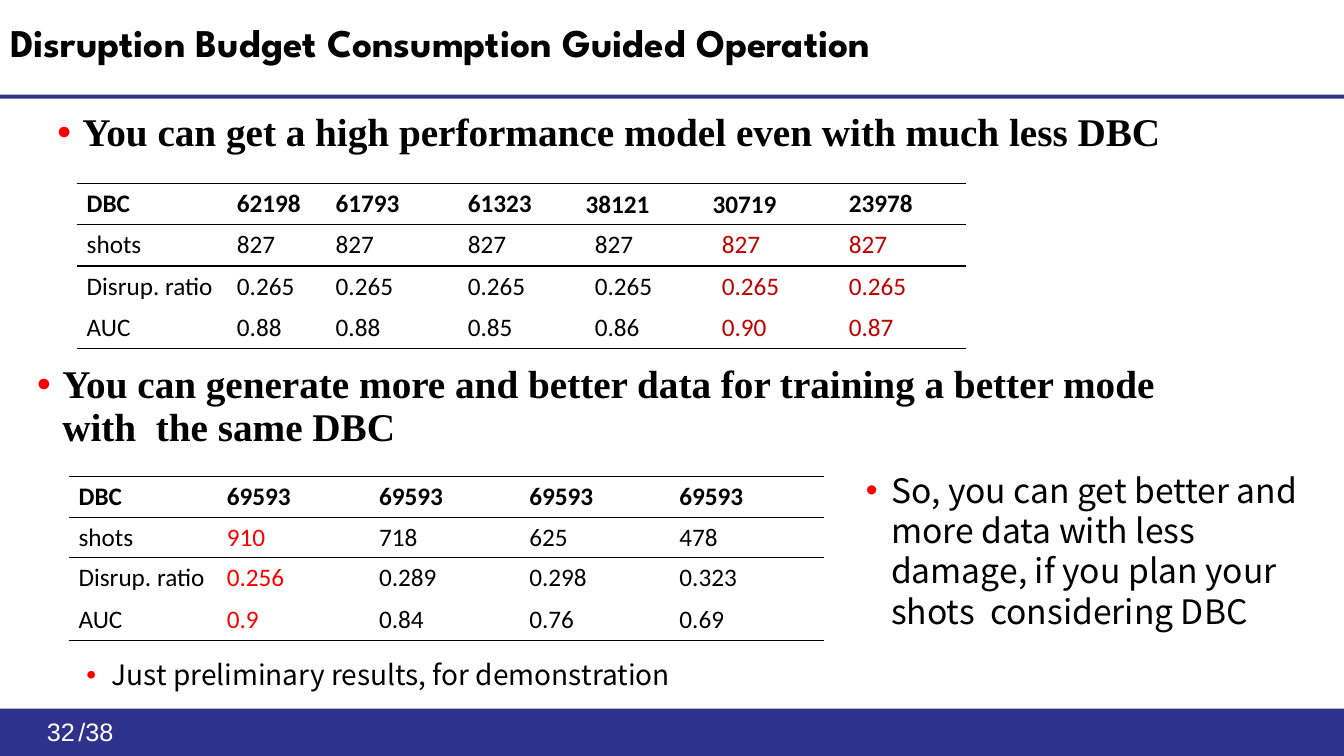
import collections
import dataclasses

import lxml.etree
import pptx
import pptx.dml.color
import pptx.enum.shapes
import pptx.enum.text
import pptx.oxml.ns
import pptx.util

PX = 9144  # EMU per px, 100 px to the inch
Box = collections.namedtuple("Box", "left top width height")
ALIGN = pptx.enum.text.PP_ALIGN
ANCHOR = pptx.enum.text.MSO_ANCHOR
NO_GRID_STYLE = "{2D5ABB26-0587-4C30-8999-92F81FD0307C}"


@dataclasses.dataclass(frozen=True)
class Theme:
    band: str = "2F328B"
    ink: str = "000000"
    paper: str = "FFFFFF"
    bullet: str = "FF0000"
    highlight_dark: str = "C00000"
    highlight_bright: str = "FF0000"
    title_font: str = "League Spartan"
    claim_font: str = "Times New Roman"
    note_font: str = "Noto Sans CJK SC"
    table_font: str = "Calibri"
    footer_font: str = "Arial"
    heading_size: int = 28
    remark_size: int = 24
    note_size: int = 20
    small_size: int = 18


THEME = Theme()


def px(length):
    return pptx.util.Emu(length * PX)


def place(shape, box):
    shape.left, shape.top, shape.width, shape.height = map(px, box)


def rgb(colour):
    return pptx.dml.color.RGBColor.from_string(colour)


def add_element(parent, tag, **attributes):
    return lxml.etree.SubElement(parent, pptx.oxml.ns.qn(tag), attributes)


def write_text(frame, text, font, size, colour=THEME.ink, bold=False,
               align=ALIGN.LEFT, anchor=ANCHOR.TOP, spacing=None, bullet=False):
    frame.word_wrap = True
    frame.vertical_anchor = anchor
    paragraph = frame.paragraphs[0]
    paragraph.alignment = align
    paragraph.line_spacing = spacing
    if bullet:
        properties = paragraph._p.get_or_add_pPr()
        properties.set("marL", str(px(25)))
        properties.set("indent", str(px(-25)))
        bullet_colour = add_element(properties, "a:buClr")
        add_element(bullet_colour, "a:srgbClr", val=THEME.bullet)
        add_element(properties, "a:buFont", typeface="Arial")
        add_element(properties, "a:buChar", char="•")
    run = paragraph.add_run()
    run.text = text
    run.font.name = font
    run.font.size = pptx.util.Pt(size)
    run.font.bold = bold
    run.font.color.rgb = rgb(colour)


def add_text(slide, box, text, **text_format):
    shape = slide.shapes.add_textbox(*map(px, box))
    write_text(shape.text_frame, text, **text_format)


def add_bar(slide, box):
    bar = slide.shapes.add_shape(pptx.enum.shapes.MSO_SHAPE.RECTANGLE, *map(px, box))
    bar.shadow.inherit = False
    bar.fill.solid()
    bar.fill.fore_color.rgb = rgb(THEME.band)
    bar.line.fill.background()


def add_header(slide, box, title):
    title_shape = slide.shapes.title
    place(title_shape, Box(box.left, box.top + 1, 1126, 87))
    write_text(title_shape.text_frame, title, font=THEME.title_font, bold=True,
               size=THEME.heading_size, anchor=ANCHOR.MIDDLE, spacing=0.9)
    add_bar(slide, Box(box.left, box.top + box.height - 4, box.width, 4))


def add_footer(slide, box, number, total):
    add_bar(slide, box)
    footer_format = dict(font=THEME.footer_font, size=THEME.small_size, colour=THEME.paper)
    add_text(slide, Box(box.left + 5, box.top + 3, 79, 40), number,
             align=ALIGN.RIGHT, **footer_format)
    add_text(slide, Box(box.left + 68, box.top + 3, 114, 40), "/" + total, **footer_format)


def add_claim(slide, box, text):
    add_text(slide, box, text, font=THEME.claim_font, size=THEME.heading_size,
             bold=True, spacing=0.9, bullet=True)


def rule_cell(cell, sides):
    properties = cell._tc.get_or_add_tcPr()
    for position, side in enumerate(sides):
        line = add_element(properties, "a:ln" + side, w=str(pptx.util.Pt(1)))
        add_element(add_element(line, "a:solidFill"), "a:srgbClr", val=THEME.ink)
        properties.insert(position, line)


def add_result_table(slide, box, rows, widths, heights, highlight, highlight_columns,
                     tight_columns=()):
    frame = slide.shapes.add_table(len(rows), len(widths), *map(px, box))
    table = frame.table
    table.first_row = table.horz_banding = False
    table._tbl.tblPr.find(pptx.oxml.ns.qn("a:tableStyleId")).text = NO_GRID_STYLE
    for column, width in zip(table.columns, widths):
        column.width = px(width)
    for row, height in zip(table.rows, heights):
        row.height = px(height)

    sides = {0: "TB", 1: "T", len(rows) - 1: "B"}
    for row_index, values in enumerate(rows):
        header = row_index == 0
        for column_index, value in enumerate(values):
            cell = table.cell(row_index, column_index)
            cell.fill.background()
            rule_cell(cell, sides.get(row_index, ""))
            marked = not header and column_index in highlight_columns
            write_text(cell.text_frame, value, font=THEME.table_font,
                       size=THEME.small_size, bold=header,
                       colour=highlight if marked else THEME.ink)
            if header and column_index in tight_columns:
                cell.vertical_anchor = ANCHOR.MIDDLE
                cell.margin_left = cell.margin_top = cell.margin_right = px(1)
                cell.margin_bottom = 0


def add_less_budget(slide, box):
    """Claim and results for a reduced budget."""
    add_claim(slide, Box(box.left, box.top, 1150, 70),
              "You can get a high performance model even with much less DBC")
    rows = [
        ["DBC", "62198", "61793", "61323", "38121", "30719", "23978"],
        ["shots"] + ["827"] * 6,
        ["Disrup. ratio"] + ["0.265"] * 6,
        ["AUC", "0.88", "0.88", "0.85", "0.86", "0.90", "0.87"],
    ]
    add_result_table(slide, Box(box.left + 29, box.top + 75, 882, 162), rows,
                     widths=[149, 98, 131] + [126] * 4, heights=[41] * 4,
                     highlight=THEME.highlight_dark, highlight_columns=(5, 6),
                     tight_columns=(4, 5))


def add_same_budget(slide, box):
    """Claim, results and remarks for an unchanged budget."""
    add_claim(slide, Box(box.left, box.top, 1200, 70),
              "You can generate more and better data for training a better mode "
              "with  the same DBC")
    rows = [
        ["DBC"] + ["69593"] * 4,
        ["shots", "910", "718", "625", "478"],
        ["Disrup. ratio", "0.256", "0.289", "0.298", "0.323"],
        ["AUC", "0.9", "0.84", "0.76", "0.69"],
    ]
    add_result_table(slide, Box(box.left + 41, box.top + 116, 749, 162), rows,
                     widths=[147, 151, 149, 149, 153], heights=[40, 40, 42, 40],
                     highlight=THEME.highlight_bright, highlight_columns=(1,))
    add_text(slide, Box(box.left + 822, box.top + 104, 480, 175),
             "So, you can get better and more data with less damage, "
             "if you plan your shots  considering DBC",
             font=THEME.note_font, size=THEME.remark_size, bullet=True)
    add_text(slide, Box(box.left + 49, box.top + 294, 1150, 40),
             "Just preliminary results, for demonstration",
             font=THEME.note_font, size=THEME.note_size, spacing=0.9, bullet=True)


def main():
    presentation = pptx.Presentation()
    presentation.slide_width, presentation.slide_height = px(1333), px(750)
    slide = presentation.slides.add_slide(presentation.slide_layouts[5])
    add_header(slide, Box(0, 0, 1333, 98), "Disruption Budget Consumption Guided Operation")
    add_less_budget(slide, Box(47, 107, 1150, 237))
    add_same_budget(slide, Box(27, 357, 1302, 334))
    add_footer(slide, Box(0, 703, 1333, 47), "32", "38")
    presentation.save("out.pptx")


if __name__ == "__main__":
    main()
